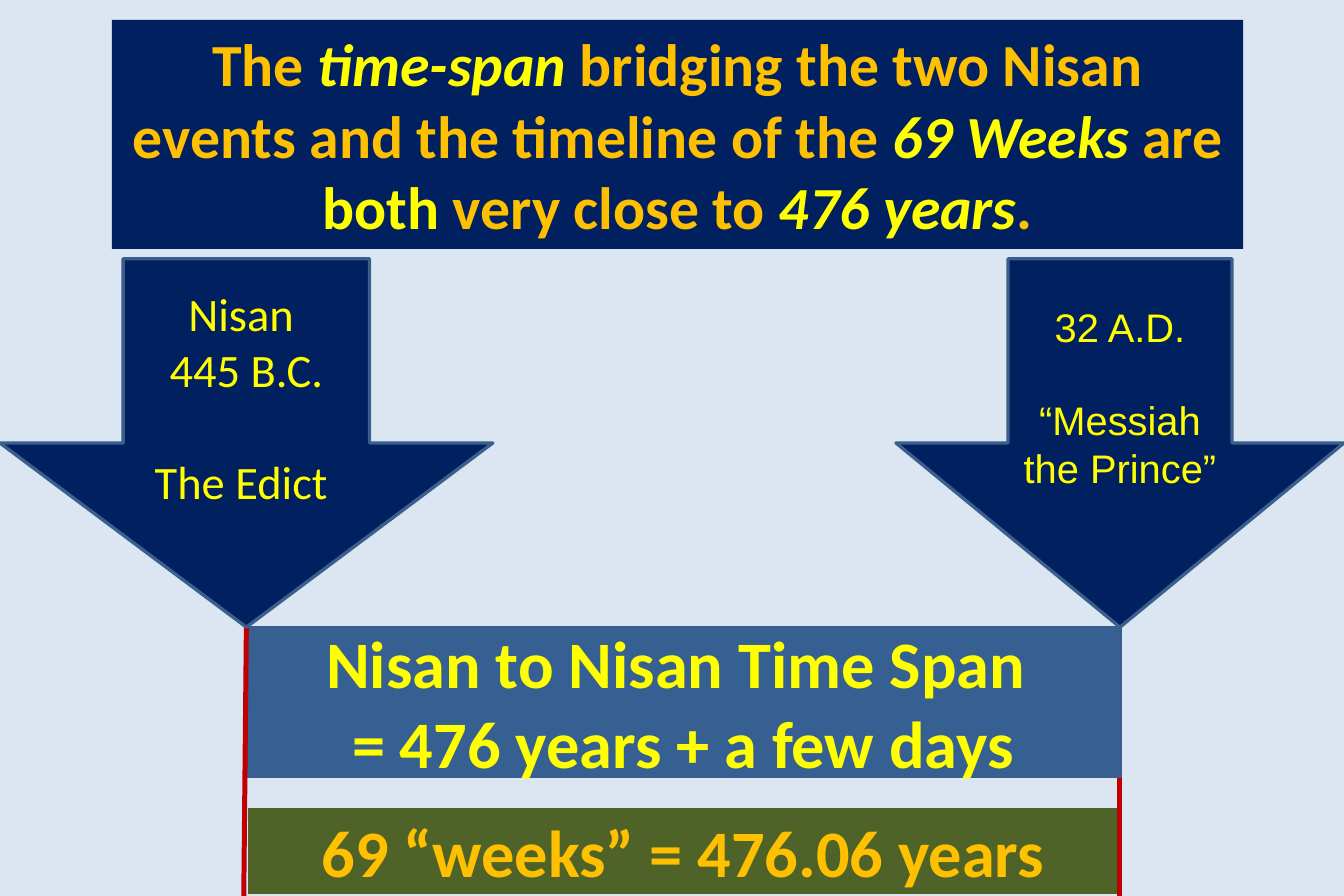
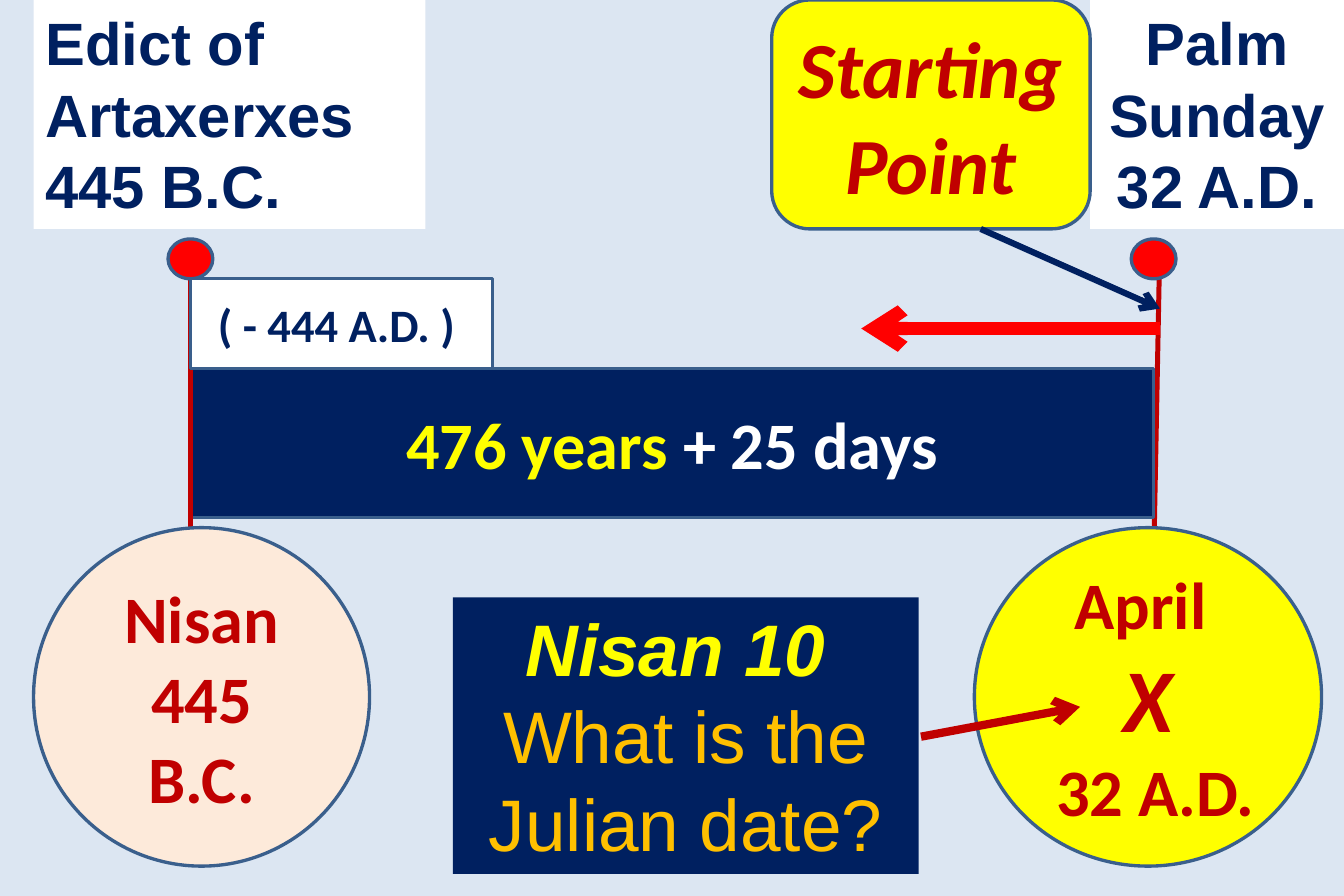
"""Builds two timeline slides on the span between the two Nisan events."""
from lxml.etree import SubElement
from pptx import Presentation
from pptx.dml.color import RGBColor
from pptx.enum.shapes import MSO_CONNECTOR, MSO_SHAPE
from pptx.enum.text import MSO_ANCHOR, MSO_AUTO_SIZE, PP_ALIGN
from pptx.oxml.ns import qn
from pptx.util import Inches, Pt

PALE = RGBColor(0xDC, 0xE6, 0xF2)
NAVY = RGBColor(0x00, 0x20, 0x60)
STEEL = RGBColor(0x37, 0x60, 0x92)
OUTLINE = RGBColor(0x3A, 0x5F, 0x8C)
OLIVE = RGBColor(0x4F, 0x62, 0x28)
PEACH = RGBColor(0xFD, 0xEA, 0xDA)
GOLD = RGBColor(0xFF, 0xC0, 0x00)
YELLOW = RGBColor(0xFF, 0xFF, 0x00)
CRIMSON = RGBColor(0xC0, 0x00, 0x00)
RED = RGBColor(0xFF, 0x00, 0x00)
WHITE = RGBColor(0xFF, 0xFF, 0xFF)

COLS, ROWS = 360, 90
TITLE_ONLY, BLANK = 5, 6


class Deck:
    """Holds the style, the grid and the current slide."""

    def __init__(self):
        self.prs = Presentation()
        self.prs.slide_width = Inches(11.25)
        self.prs.slide_height = Inches(7.5)

    def x(self, cols):
        return round(self.prs.slide_width * cols / COLS)

    def y(self, rows):
        return round(self.prs.slide_height * rows / ROWS)

    def new_slide(self, layout):
        self.s = self.prs.slides.add_slide(self.prs.slide_layouts[layout])
        fill = self.s.background.fill
        fill.solid()
        fill.fore_color.rgb = PALE

    def paint(self, sp, fill, line):
        sp.fill.solid()
        sp.fill.fore_color.rgb = fill
        if line is None:
            sp.line.fill.background()
        else:
            sp.line.color.rgb = line
            sp.line.width = Pt(2)

    def title(self, at, fill, runs, **style):
        sp = self.s.shapes.title
        left, top, width, height = at
        sp.left, sp.top = self.x(left), self.y(top)
        sp.width, sp.height = self.x(width), self.y(height)
        self.paint(sp, fill, None)
        self.put_text(sp, [runs], **style)

    def shape(self, kind, at, fill, paragraphs=(), line=OUTLINE, **style):
        left, top, width, height = at
        sp = self.s.shapes.add_shape(
            kind, self.x(left), self.y(top), self.x(width), self.y(height))
        sp.shadow.inherit = False
        self.paint(sp, fill, line)
        if paragraphs:
            self.put_text(sp, paragraphs, **style)

    def box(self, *args, **style):
        self.shape(MSO_SHAPE.RECTANGLE, *args, **style)

    def put_text(self, sp, paragraphs, anchor=MSO_ANCHOR.MIDDLE,
                 align=PP_ALIGN.CENTER, gaps=(), **style):
        tf = sp.text_frame
        tf.word_wrap = True
        tf.auto_size = MSO_AUTO_SIZE.NONE
        tf.vertical_anchor = anchor
        for i, runs in enumerate(paragraphs):
            p = tf.paragraphs[0] if i == 0 else tf.add_paragraph()
            p.alignment = align
            if i < len(gaps):
                p.space_before = Pt(gaps[i])
            if isinstance(runs, str):
                runs = [(runs, {})]
            for text, changes in runs:
                r = p.add_run()
                r.text = text
                self.style_font(r.font, **{**style, **changes})

    def style_font(self, font, size, color, name="Calibri", bold=True, italic=False):
        font.name = name
        font.size = Pt(size)
        font.bold = bold
        font.italic = italic
        font.color.rgb = color

    def line(self, start, end, color, width, arrow=False):
        (x1, y1), (x2, y2) = start, end
        sp = self.s.shapes.add_connector(
            MSO_CONNECTOR.STRAIGHT, self.x(x1), self.y(y1), self.x(x2), self.y(y2))
        sp.line.color.rgb = color
        sp.line.width = Pt(width)
        props = sp.element.spPr
        if arrow:
            SubElement(props.find(qn("a:ln")), qn("a:tailEnd"), type="arrow")
        SubElement(props, qn("a:effectLst"))


def time_span(deck):
    deck.new_slide(TITLE_ONLY)
    bright = {"color": YELLOW}
    accent = {"color": YELLOW, "italic": True}
    deck.title((30, 2, 303, 23), NAVY, [
        ("The ", {}), ("time-span", accent),
        (" bridging the two Nisan events and the timeline of the ", {}),
        ("69 Weeks ", accent), ("are ", {}), ("both", bright),
        (" very close to ", {}), ("476 years", accent), (".", {}),
    ], size=36, color=GOLD)
    deck.box((66, 81, 234, 9), OLIVE, ["69 “weeks” = 476.06 years"],
             line=PALE, size=40, color=GOLD)
    deck.line((300, 90), (300, 63), CRIMSON, 3)
    deck.box((66, 63, 234, 15), STEEL,
             ["Nisan to Nisan Time Span ", "= 476 years + a few days"],
             size=40, color=YELLOW)
    deck.line((65.3, 90), (66, 63), CRIMSON, 3)
    for left, width, text, gaps, name, size in (
            (0, 132, ["Nisan ", "445 B.C.", "The Edict "], (0, 0, 34), "Calibri", 28),
            (240, 120, ["32 A.D.", "“Messiah", "the Prince”"], (0, 27.6), "Arial", 24)):
        deck.shape(MSO_SHAPE.DOWN_ARROW, (left, 26, width, 37), NAVY, text,
                   gaps=gaps, name=name, size=size, color=YELLOW, bold=False)


def starting_point(deck):
    deck.new_slide(BLANK)
    label = {"line": None, "anchor": MSO_ANCHOR.TOP, "name": "Arial"}
    deck.line((309, 57), (310.5, 28), CRIMSON, 3)
    deck.box((292, 0, 68, 23), WHITE, ["Palm Sunday", "32 A.D."],
             size=36, color=NAVY, **label)
    deck.box((51, 37, 258, 15), NAVY,
             [[("476 years ", {"color": YELLOW}), ("+ 25 days", {})]],
             size=40, color=WHITE)
    deck.line((51, 53), (51, 28), CRIMSON, 3)
    for left in (45, 303):
        deck.shape(MSO_SHAPE.OVAL, (left, 24, 12, 4), RED)
    april = ["April ", [("X", {"size": 54, "italic": True})], " 32 A.D."]
    for left, width, fill, text in ((9, 90, PEACH, ["Nisan", "445 B.C."]),
                                    (261, 93, YELLOW, april)):
        deck.shape(MSO_SHAPE.OVAL, (left, 53, width, 34), fill, text,
                   size=40, color=CRIMSON)
    deck.box((9, 0, 105, 23), WHITE, ["Edict of", "Artaxerxes", "445 B.C."],
             size=36, color=NAVY, align=PP_ALIGN.LEFT, **label)
    deck.line((246.7, 74), (289.3, 71), CRIMSON, 5, arrow=True)
    deck.box((51, 28, 81, 9), WHITE, ["( - 444 A.D. ) "], size=28, color=NAVY)
    heading = {"color": YELLOW, "bold": True, "italic": True}
    deck.box((121.3, 60, 124.8, 27.8), NAVY,
             [[("Nisan 10 ", heading)], "What is the Julian date?"],
             size=44, color=GOLD, bold=False, **label)
    deck.line((310.7, 33), (230.7, 33), RED, 8, arrow=True)
    deck.shape(MSO_SHAPE.ROUNDED_RECTANGLE, (206.7, 0, 85.3, 23), YELLOW,
               ["Starting Point"], size=48, color=CRIMSON, italic=True)
    deck.line((262.7, 23), (310.7, 31), NAVY, 3.75, arrow=True)


def main():
    deck = Deck()
    time_span(deck)
    starting_point(deck)
    deck.prs.save("out.pptx")


if __name__ == "__main__":
    main()
